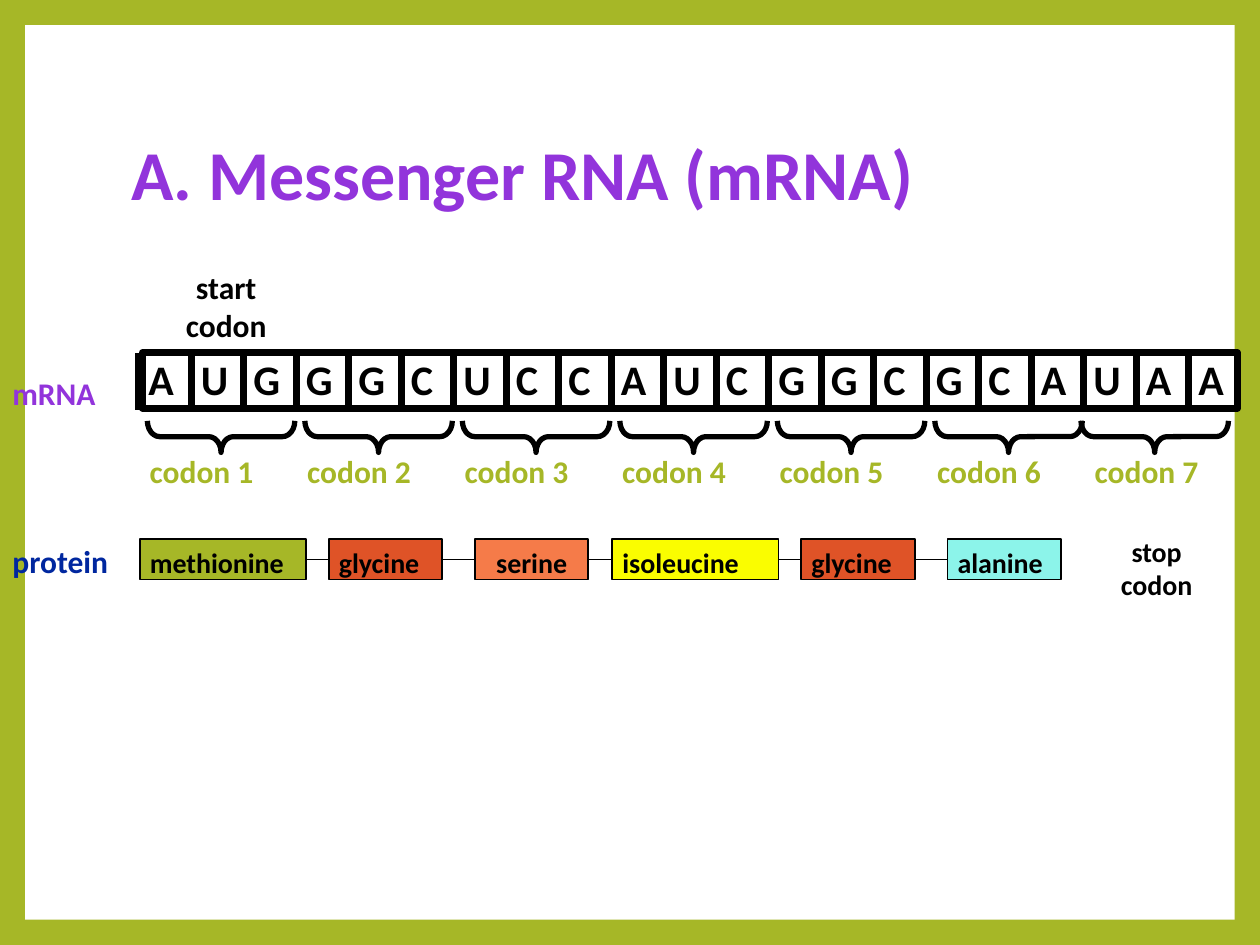
"""Build a slide that maps an mRNA strand through its codons to a protein."""
from lxml.etree import SubElement
from pptx import Presentation
from pptx.dml.color import RGBColor
from pptx.enum.shapes import MSO_CONNECTOR, MSO_SHAPE as Shape
from pptx.enum.text import MSO_ANCHOR as Anchor, PP_ALIGN as Align
from pptx.oxml.ns import qn
from pptx.util import Inches, Pt

TITLE = "A. Messenger RNA (mRNA)"
CODONS = ["AUG", "GGC", "UCC", "AUC", "GGC", "GCA", "UAA"]
AMINO_ACIDS = [
    ("methionine", 1.11, 1.32, "A6B727", Align.LEFT),
    ("glycine", 2.61, 0.9, "DF5327", Align.LEFT),
    ("serine", 3.77, 0.9, "F57B49", Align.CENTER),
    ("isoleucine", 4.86, 1.32, "FAFD00", Align.LEFT),
    ("glycine", 6.36, 0.9, "DF5327", Align.LEFT),
    ("alanine", 7.52, 0.9, "8CF4EA", Align.LEFT),
]
LABELS = [
    ("mRNA", (0, 2.92, 0.96, 0.4), 18, "9234DB", Align.LEFT),
    ("protein", (0, 4.25, 1.05, 0.4), 18, "00279F", Align.LEFT),
    ("start\ncodon", (1.32, 2.08, 0.95, 0.7), 18, "000000", Align.CENTER),
    ("stop\ncodon", (8.75, 4.19, 0.86, 0.63), 16, "000000", Align.CENTER),
]
FONT, BLACK, WHITE, GREEN, PURPLE = "Calibri", "000000", "FFFFFF", "A6B727", "9234DB"
WIDTH, HEIGHT, MARGIN = 10, 7.5, 0.2
STRAND_LEFT, STRAND_TOP, STRAND_BOTTOM = 1.1, 2.8, 3.25
CODON_WIDTH = 1.25
BASE_WIDTH = CODON_WIDTH / 3
LAST_BRACE = 9.04


def color(value):
    return RGBColor.from_string(value)


def write(box, text, size, ink, align=Align.LEFT):
    box.text_frame.text = text
    for para in box.text_frame.paragraphs:
        para.alignment = align
        for span in para.runs:
            font = span.font
            font.name, font.size, font.bold = FONT, Pt(size), True
            font.color.rgb = color(ink)


def add_label(page, text, place, size, ink, align=Align.LEFT):
    box = page.shapes.add_textbox(*map(Inches, place))
    box.text_frame.word_wrap = True
    write(box, text, size, ink, align)


def add_shape(page, kind, place, fill=None, line=None):
    shape = page.shapes.add_shape(kind, *map(Inches, place))
    shape.shadow.inherit = False
    if fill:
        shape.fill.solid()
        shape.fill.fore_color.rgb = color(fill)
    else:
        shape.fill.background()
    if line:
        shape.line.color.rgb = color(BLACK)
        shape.line.width = Pt(line)
    else:
        shape.line.fill.background()
    return shape


def add_line(page, ends, width):
    line = page.shapes.add_connector(MSO_CONNECTOR.STRAIGHT, *map(Inches, ends))
    line.line.color.rgb = color(BLACK)
    line.line.width = Pt(width)
    SubElement(line.element.spPr, qn("a:effectLst"))
    return line


def add_title(page):
    title = page.shapes.title
    title.left, title.top, title.width, title.height = map(Inches, (0.94, 0.67, 8.1, 1.48))
    title.text_frame.vertical_anchor = Anchor.MIDDLE
    write(title, TITLE, 40, PURPLE)
    title.text_frame.paragraphs[0].line_spacing = 0.9
    panel = add_shape(page, Shape.RECTANGLE,
                      (MARGIN, MARGIN, WIDTH - 2 * MARGIN, HEIGHT - 2 * MARGIN), WHITE)
    title.element.addprevious(panel.element)


def add_protein(page):
    previous = None
    for name, left, width, fill, align in AMINO_ACIDS:
        block = add_shape(page, Shape.RECTANGLE, (left, 4.28, width, 0.32), fill, 1)
        frame = block.text_frame
        frame.vertical_anchor, frame.word_wrap = Anchor.TOP, True
        frame.margin_left = frame.margin_right = Inches(0.08)
        frame.margin_bottom = 0
        write(block, name, 16, BLACK, align)
        if previous:
            bond = add_line(page, (left, 4.44, left, 4.44), 1)
            bond.begin_connect(previous, 3)
            bond.end_connect(block, 1)
        previous = block


def add_strand(page):
    add_shape(page, Shape.RECTANGLE, (1.13, STRAND_TOP, 8.69, 0.44), WHITE, 4)
    for index, base in enumerate("".join(CODONS)):
        left = STRAND_LEFT + index * BASE_WIDTH
        add_line(page, (left, STRAND_TOP, left, STRAND_BOTTOM), 4)
        add_label(page, base, (left - 0.02, 2.76, 0.46, 0.5), 24, BLACK)


def add_codons(page):
    for index in range(len(CODONS)):
        shift = index * CODON_WIDTH
        add_label(page, f"codon {index + 1}", (1.09 + shift, 3.54, 1.16, 0.4), 18, GREEN)
        brace = add_shape(page, Shape.LEFT_BRACE,
                          (min(1.63 + shift, LAST_BRACE), 2.88, 0.25, 1.17), line=3)
        brace.rotation = 270
        brace.adjustments[0] = 0.39


def main():
    deck = Presentation()
    deck.slide_width, deck.slide_height = Inches(WIDTH), Inches(HEIGHT)
    page = deck.slides.add_slide(deck.slide_layouts[5])
    page.background.fill.solid()
    page.background.fill.fore_color.rgb = color(GREEN)
    add_title(page)
    add_protein(page)
    add_strand(page)
    add_codons(page)
    for label in LABELS:
        add_label(page, *label)
    deck.save("out.pptx")


if __name__ == "__main__":
    main()
